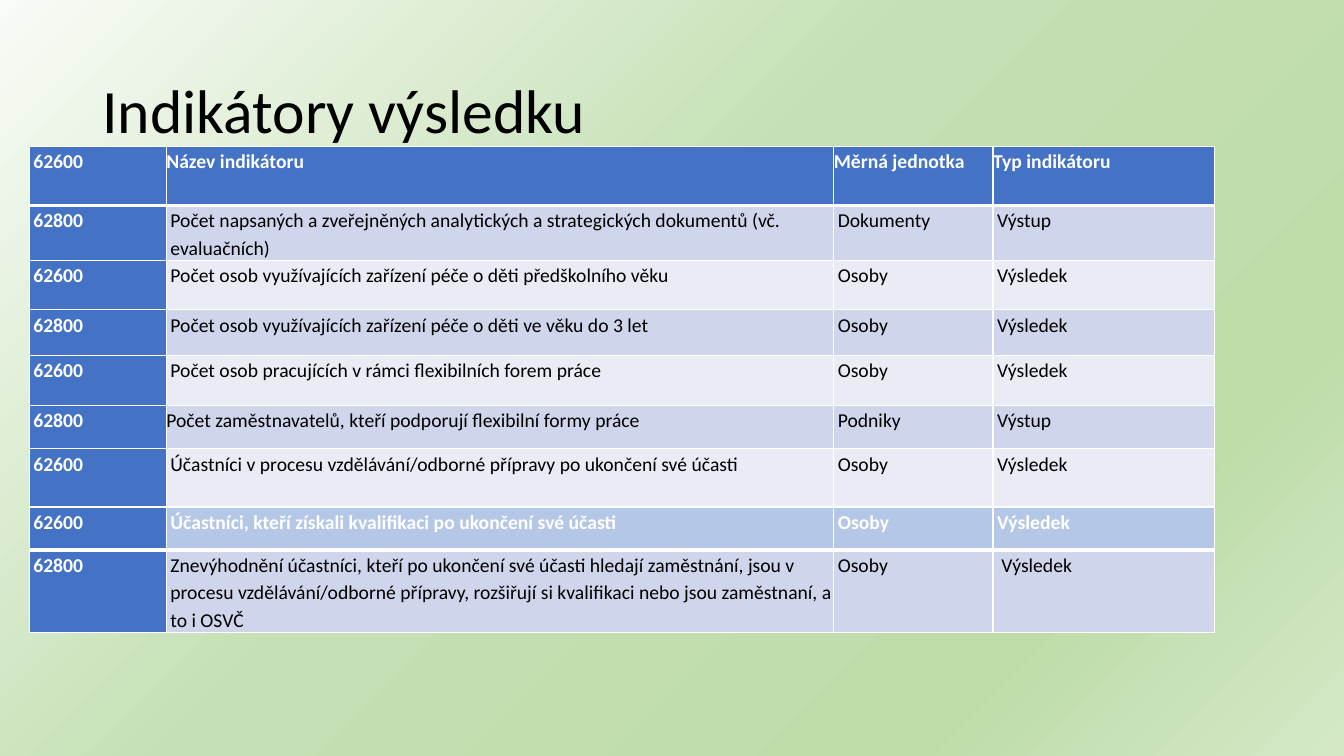
from dataclasses import dataclass

from lxml import etree
from pptx import Presentation
from pptx.dml.color import RGBColor
from pptx.enum.text import MSO_ANCHOR, MSO_AUTO_SIZE, PP_ALIGN
from pptx.oxml.ns import qn
from pptx.slide import Slide
from pptx.table import _Cell
from pptx.util import Emu, Inches, Length, Pt

ALIGN_LEFT = PP_ALIGN.LEFT
ALIGN_JUSTIFY = PP_ALIGN.JUSTIFY
ANCHOR_MIDDLE = MSO_ANCHOR.MIDDLE
NO_AUTOFIT = MSO_AUTO_SIZE.NONE

SLIDE_WIDTH = Inches(13.33)
SLIDE_HEIGHT = Inches(7.5)
TITLE_ONLY_LAYOUT = 5


@dataclass(frozen=True)
class Theme:
    font: str = "Calibri"
    title_size: int = 44
    table_size: int = 14
    dark: str = "000000"
    light: str = "FFFFFF"
    accent: str = "4472C4"
    highlight: str = "B4C7E7"
    bands: tuple[str, str] = ("CFD5EA", "E9EBF5")
    background: tuple[tuple[int, str], ...] = (
        (0, "F8FBF6"), (44, "C5E0B4"), (79, "BEDCAA"), (100, "D4E8C6"),
    )
    thin_border: int = 1
    thick_border: int = 3


@dataclass(frozen=True)
class TextStyle:
    alignment: PP_ALIGN = ALIGN_LEFT
    indent: float = 0.3
    space_before: int = 3
    space_after: int = 3


@dataclass(frozen=True)
class IndicatorRow:
    height: float
    texts: tuple[str, str, str, str]
    fill: str
    emphasised: bool = False
    justified: dict[int, TextStyle] | None = None


@dataclass(frozen=True)
class IndicatorTable:
    top: float
    rows: tuple[IndicatorRow, ...]


THEME = Theme()
ODD_BAND, EVEN_BAND = THEME.bands
INDENTED = TextStyle()
HEADING = TextStyle(ALIGN_JUSTIFY, 0, 0, 6)
FLUSH = TextStyle(ALIGN_JUSTIFY, 0, 0, 11)

TABLE_LEFT = 2.18
COLUMN_WIDTHS = (10.2, 49.66, 11.85, 16.5)

TABLES = (
    IndicatorTable(19.33, (
        IndicatorRow(7.87, ("62600", "Název indikátoru", "Měrná jednotka", "Typ indikátoru"),
                     THEME.accent, True, {1: HEADING, 2: HEADING, 3: HEADING}),
        IndicatorRow(6.53, ("62800", "Počet napsaných a zveřejněných analytických a strategických "
                            "dokumentů (vč. evaluačních)", "Dokumenty", "Výstup"), ODD_BAND),
        IndicatorRow(6.53, ("62600", "Počet osob využívajících zařízení péče o děti předškolního věku",
                            "Osoby", "Výsledek"), EVEN_BAND),
        IndicatorRow(6, ("62800", "Počet osob využívajících zařízení péče o děti ve věku do 3 let",
                         "Osoby", "Výsledek"), ODD_BAND),
        IndicatorRow(6.67, ("62600", "Počet osob pracujících v rámci flexibilních forem práce",
                            "Osoby", "Výsledek"), EVEN_BAND),
        IndicatorRow(5.73, ("62800", "Počet zaměstnavatelů, kteří podporují flexibilní formy práce",
                            "Podniky", "Výstup"), ODD_BAND, justified={1: FLUSH}),
        IndicatorRow(9.07, ("62600", "Účastníci v procesu vzdělávání/odborné přípravy po ukončení "
                            "své účasti", "Osoby", "Výsledek"), EVEN_BAND),
    )),
    IndicatorTable(67.07, (
        IndicatorRow(5.73, ("62600", "Účastníci, kteří získali kvalifikaci po ukončení své účasti",
                            "Osoby", "Výsledek"), THEME.highlight, True),
        IndicatorRow(9.07, ("62800", "Znevýhodnění účastníci, kteří po ukončení své účasti hledají "
                            "zaměstnání, jsou v procesu vzdělávání/odborné přípravy, rozšiřují si "
                            "kvalifikaci nebo jsou zaměstnaní, a to i OSVČ",
                            "Osoby", " Výsledek"), ODD_BAND),
    )),
)


def across(percent: float) -> Length:
    return Emu(round(SLIDE_WIDTH * percent / 100))


def down(percent: float) -> Length:
    return Emu(round(SLIDE_HEIGHT * percent / 100))


def add_solid_colour(parent: etree._Element, colour: str) -> None:
    etree.SubElement(parent, qn("a:srgbClr"), val=colour)


def paint_background(slide: Slide) -> None:
    fill = slide.background.fill
    fill.gradient()
    fill.gradient_angle = 315
    stops = slide.element.find(".//" + qn("a:gsLst"))
    for stop in list(stops):
        stops.remove(stop)
    for position, colour in THEME.background:
        stop = etree.SubElement(stops, qn("a:gs"), pos=str(position * 1000))
        add_solid_colour(stop, colour)


def add_run(paragraph, text: str, size: int, colour: str, bold: bool = False) -> None:
    run = paragraph.add_run()
    run.text = text
    run.font.name = THEME.font
    run.font.size = Pt(size)
    run.font.bold = bold
    run.font.color.rgb = RGBColor.from_string(colour)


def add_title(slide: Slide, text: str) -> None:
    title = slide.shapes.title
    title.left, title.top = across(6.88), down(5.33)
    title.width, title.height = across(86.27), down(19.33)
    frame = title.text_frame
    frame.word_wrap = True
    frame.auto_size = NO_AUTOFIT
    frame.vertical_anchor = ANCHOR_MIDDLE
    paragraph = frame.paragraphs[0]
    paragraph.alignment = ALIGN_LEFT
    paragraph.line_spacing = 0.9
    add_run(paragraph, text, THEME.title_size, THEME.dark)


def draw_borders(cell: _Cell, top: int, bottom: int) -> None:
    properties = cell._tc.get_or_add_tcPr()
    widths = {"lnL": THEME.thin_border, "lnR": THEME.thin_border, "lnT": top, "lnB": bottom}
    for side, width in widths.items():
        line = etree.SubElement(properties, qn(f"a:{side}"), w=str(Pt(width)))
        add_solid_colour(etree.SubElement(line, qn("a:solidFill")), THEME.light)


def write_cell(cell: _Cell, text: str, style: TextStyle, colour: str, bold: bool) -> None:
    cell.margin_left = cell.margin_right = cell.margin_top = cell.margin_bottom = 0
    paragraph = cell.text_frame.paragraphs[0]
    paragraph.alignment = style.alignment
    paragraph.line_spacing = 1.15
    paragraph.space_before = Pt(style.space_before)
    paragraph.space_after = Pt(style.space_after)
    properties = paragraph._p.get_or_add_pPr()
    properties.set("marL", str(across(style.indent)))
    properties.set("indent", "0")
    add_run(paragraph, text, THEME.table_size, colour, bold)


def add_indicator_table(slide: Slide, indicators: IndicatorTable) -> None:
    rows = indicators.rows
    table = slide.shapes.add_table(
        len(rows), len(COLUMN_WIDTHS), across(TABLE_LEFT), down(indicators.top),
        across(sum(COLUMN_WIDTHS)), down(sum(row.height for row in rows)),
    ).table
    table.first_row = table.horz_banding = False
    for column, width in zip(table.columns, COLUMN_WIDTHS):
        column.width = across(width)
    top_border = THEME.thin_border
    for row_index, row in enumerate(rows):
        table.rows[row_index].height = down(row.height)
        bottom_border = THEME.thick_border if row.emphasised else THEME.thin_border
        for column_index, text in enumerate(row.texts):
            cell = table.cell(row_index, column_index)
            is_code = column_index == 0
            bold = is_code or row.emphasised
            style = (row.justified or {}).get(column_index, INDENTED)
            draw_borders(cell, top_border, bottom_border)
            cell.fill.solid()
            cell.fill.fore_color.rgb = RGBColor.from_string(THEME.accent if is_code else row.fill)
            write_cell(cell, text, style, THEME.light if bold else THEME.dark, bold)
        top_border = bottom_border


def main() -> None:
    presentation = Presentation()
    presentation.slide_width = SLIDE_WIDTH
    presentation.slide_height = SLIDE_HEIGHT
    slide = presentation.slides.add_slide(presentation.slide_layouts[TITLE_ONLY_LAYOUT])
    paint_background(slide)
    add_title(slide, "Indikátory výsledku")
    for indicators in TABLES:
        add_indicator_table(slide, indicators)
    presentation.save("out.pptx")


if __name__ == "__main__":
    main()
